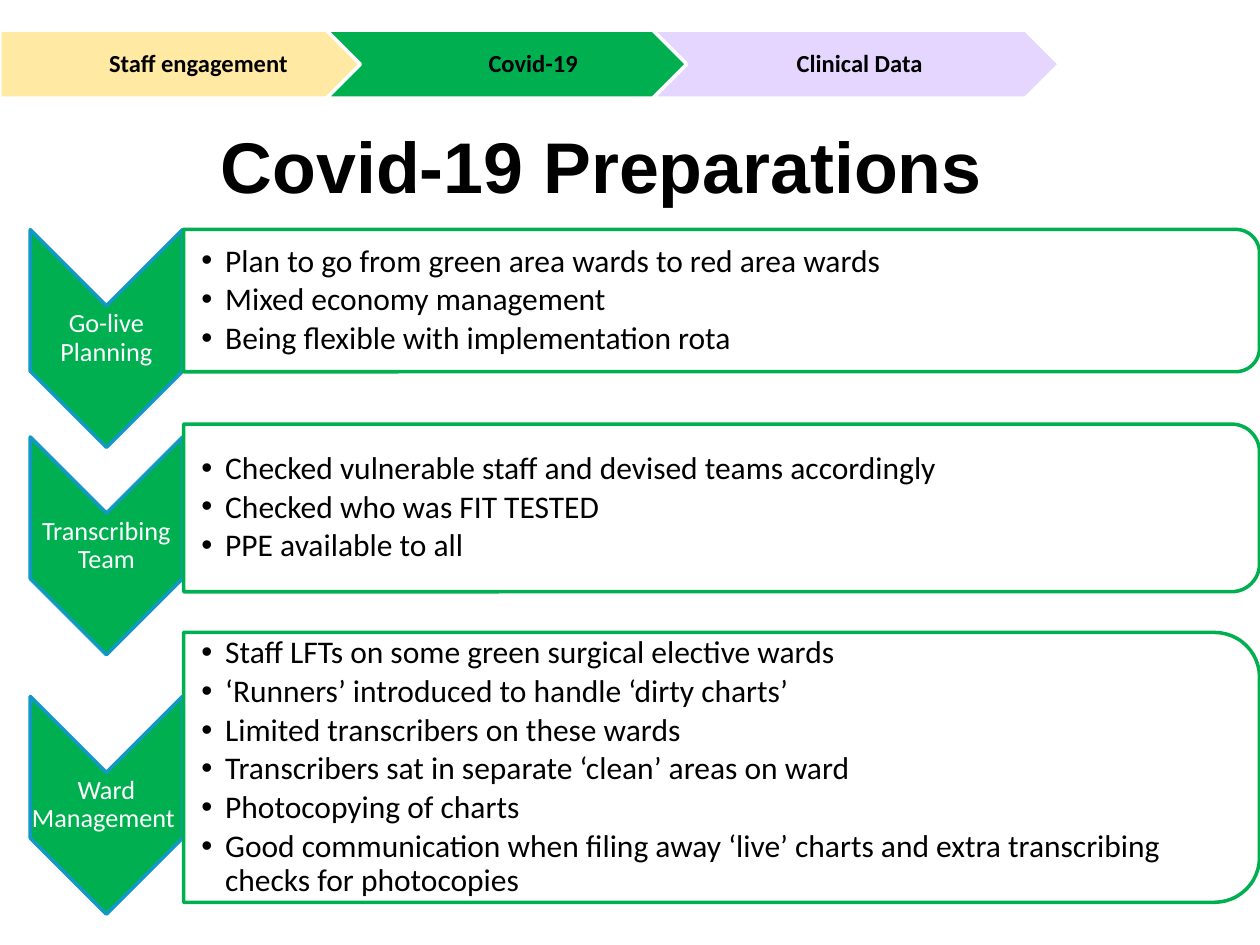
from lxml.etree import SubElement
from pptx import Presentation
from pptx.dml.color import RGBColor
from pptx.enum.shapes import MSO_SHAPE
from pptx.enum.text import MSO_ANCHOR, MSO_AUTO_SIZE, PP_ALIGN
from pptx.oxml.ns import qn
from pptx.util import Cm, Pt

GREEN, BLUE, WHITE, BLACK = "00B050", "1398C5", "FFFFFF", "000000"

# Banner steps: label, shape, fill, text offset, text width (cm)
STEPS = [
    ("Staff engagement", MSO_SHAPE.PENTAGON, "FFE9A3", 0, 7.87),
    ("Covid-19", MSO_SHAPE.CHEVRON, GREEN, 0.69, 6.83),
    ("Clinical Data", MSO_SHAPE.CHEVRON, "E5D6FF", 0.69, 6.83),
]

# Rows: label, panel centre, panel height (cm), list
ROWS = [
    ("Go-live Planning", 6.06, 2.87, [
        "Plan to go from green area wards to red area wards",
        "Mixed economy management",
        "Being flexible with implementation rota",
    ]),
    ("Transcribing Team", 10.24, 3.38, [
        "Checked vulnerable staff and devised teams accordingly",
        "Checked who was FIT TESTED",
        "PPE available to all",
    ]),
    ("Ward Management ", 15.47, 5.44, [
        "Staff LFTs on some green surgical elective wards",
        "‘Runners’ introduced to handle ‘dirty charts’",
        "Limited transcribers on these wards",
        "Transcribers sat in separate ‘clean’ areas on ward",
        "Photocopying of charts",
        "Good communication when filing away ‘live’ charts and extra "
        "transcribing checks for photocopies",
    ]),
]


def color(value):
    return RGBColor.from_string(value)


def set_font(paragraph, name, size, value, bold=False):
    font = paragraph.font
    font.name, font.size, font.bold = name, Pt(size), bold
    font.color.rgb = color(value)


def set_frame(frame, margins, anchor=MSO_ANCHOR.MIDDLE):
    frame.word_wrap = True
    frame.auto_size = MSO_AUTO_SIZE.NONE
    frame.vertical_anchor = anchor
    (frame.margin_left, frame.margin_top,
     frame.margin_right, frame.margin_bottom) = map(Cm, margins)


def add_block(slide, kind, left, top, width, height, fill, line):
    shape = slide.shapes.add_shape(kind, Cm(left), Cm(top), Cm(width), Cm(height))
    shape.shadow.inherit = False
    shape.fill.solid()
    shape.fill.fore_color.rgb = color(fill)
    shape.line.color.rgb = color(line)
    shape.line.width = Pt(2)
    return shape


def add_turned_block(slide, kind, left, top, width, height, fill, line):
    """Place a shape turned by 90 degrees so that it covers the given area."""
    shift = (width - height) / 2
    shape = add_block(slide, kind, left + shift, top - shift, height, width, fill, line)
    shape.rotation = 90
    return shape


def add_frame(slide, left, top, width, height, margins):
    box = slide.shapes.add_textbox(Cm(left), Cm(top), Cm(width), Cm(height))
    set_frame(box.text_frame, margins)
    return box.text_frame


def add_label(slide, text, area, margins, size, value, bold=False):
    paragraph = add_frame(slide, *area, margins).paragraphs[0]
    paragraph.text = text
    paragraph.alignment = PP_ALIGN.CENTER
    paragraph.line_spacing = 0.9
    set_font(paragraph, "Calibri", size, value, bold)


def add_list(slide, items, area):
    frame = add_frame(slide, *area, (0.36, 0.03, 0.03, 0.03))
    for index, item in enumerate(items):
        paragraph = frame.add_paragraph() if index else frame.paragraphs[0]
        paragraph.text = item
        paragraph.line_spacing = 0.9
        paragraph.space_after = Pt(2.7)
        properties = paragraph._p.get_or_add_pPr()
        properties.set("marL", str(Cm(0.48)))
        properties.set("indent", str(-Cm(0.48)))
        SubElement(properties, qn("a:buFont"), typeface="Arial")
        SubElement(properties, qn("a:buChar"), char="•")
        set_font(paragraph, "Calibri", 18, BLACK)


def add_step(slide, index, label, kind, fill, offset, text_width):
    left, top, height = index * 6.58, 0.61, 1.37
    add_block(slide, kind, left, top, 8.2, height, fill, WHITE)
    add_label(slide, label, (left + offset, top, text_width, height),
              (0.18, 0.1, 0.05, 0.1), 14, BLACK, bold=True)


def add_row(slide, label, centre, height, items):
    # Downward chevron with its label
    left, top, width = 0.61, centre - 1.43, 3.07
    add_turned_block(slide, MSO_SHAPE.CHEVRON, left, top, width, 4.39, GREEN, BLUE)
    add_label(slide, label, (left, top + width / 2, width, 1.32),
              (0, 0, 0, 0), 15, WHITE)

    # Panel, rounded on the right, with its list
    left, top, width = 3.7, centre - height / 2, 21.69
    panel = add_turned_block(slide, MSO_SHAPE.ROUND_2_SAME_RECTANGLE,
                             left, top, width, height, WHITE, GREEN)
    fill = panel._element.spPr.find(qn("a:solidFill"))
    SubElement(fill[0], qn("a:alpha"), val="90000")
    inset = height * 0.05
    add_list(slide, items, (left, top + inset, width - inset, height - 2 * inset))


def add_title(slide, text):
    title = slide.shapes.title
    title.left, title.top, title.width, title.height = map(Cm, (1.4, 2.44, 21.87, 1.75))
    set_frame(title.text_frame, (0, 0, 0, 0), MSO_ANCHOR.BOTTOM)
    paragraph = title.text_frame.paragraphs[0]
    paragraph.text = text
    paragraph.alignment = PP_ALIGN.CENTER
    set_font(paragraph, "Arial", 41, BLACK, bold=True)


def main():
    presentation = Presentation()
    presentation.slide_width, presentation.slide_height = Cm(25.4), Cm(19.05)
    slide = presentation.slides.add_slide(presentation.slide_layouts[5])

    add_title(slide, "Covid-19 Preparations ")
    for row in ROWS:
        add_row(slide, *row)
    for index, step in enumerate(STEPS):
        add_step(slide, index, *step)

    presentation.save("out.pptx")


if __name__ == "__main__":
    main()
